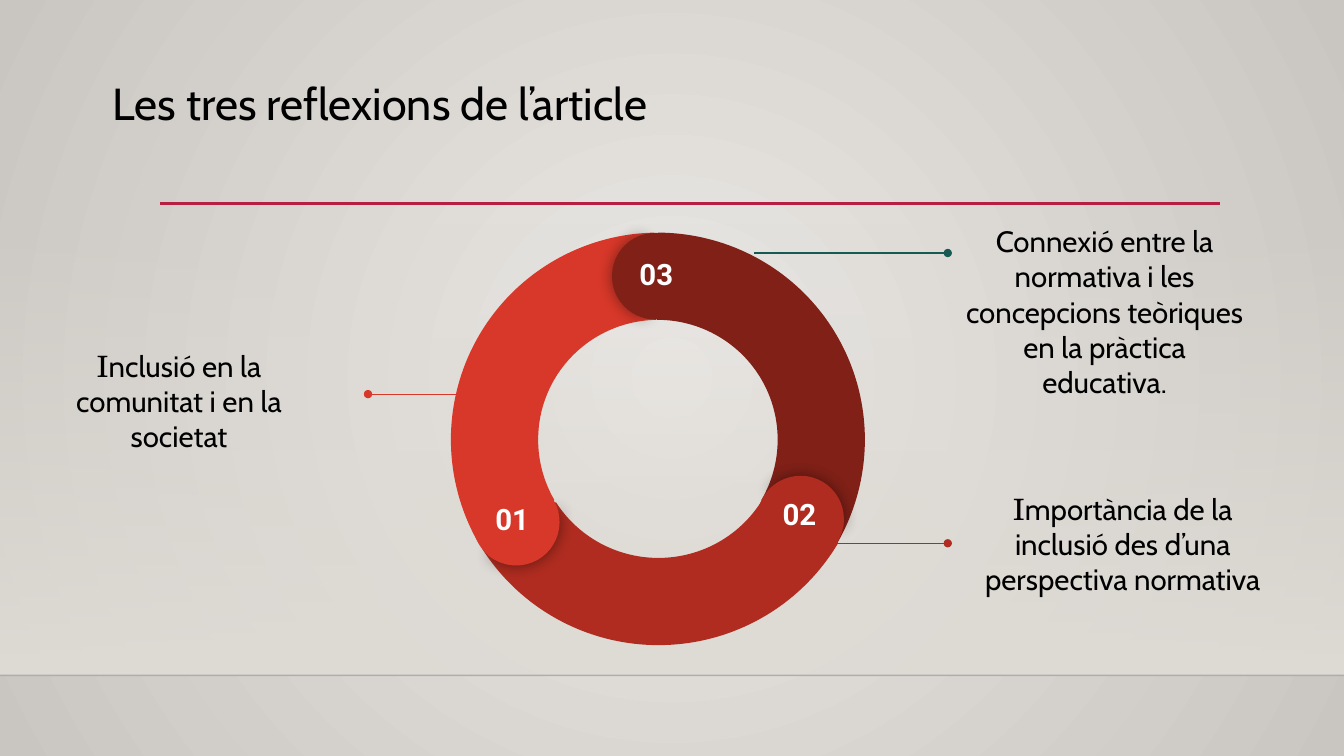
from lxml import etree
from pptx import Presentation
from pptx.dml.color import RGBColor
from pptx.enum.shapes import MSO_CONNECTOR, MSO_SHAPE
from pptx.enum.text import MSO_ANCHOR, PP_ALIGN
from pptx.oxml import parse_xml
from pptx.oxml.ns import nsdecls, qn
from pptx.util import Inches, Pt

RECT, ARC, PIE = MSO_SHAPE.RECTANGLE, MSO_SHAPE.BLOCK_ARC, MSO_SHAPE.PIE
STRAIGHT = MSO_CONNECTOR.STRAIGHT
LEFT, CENTER = PP_ALIGN.LEFT, PP_ALIGN.CENTER
TOP, MIDDLE = MSO_ANCHOR.TOP, MSO_ANCHOR.MIDDLE

# Content
W, H = 13.33, 7.5
FLOOR = 6.7
BLACK, WHITE = "000000", "FFFFFF"
BRIGHT, MEDIUM, DARK = "D83829", "B02C20", "802017"
BODY, SERIF, NUMERAL = "Cabin", "TeX Gyre Schola", "Roboto"
TITLE = "Les tres reflexions de l’article"

# Ring segments, back to front: box, rotation, colour, arc adjustments
ARCS = [
    ((4.45, 2.3, 4.12, 4.14), 60, DARK, (126.23, 197.82, 0.21)),
    ((4.46, 2.28, 4.14, 4.12), 180, MEDIUM, (126.23, 196.63, 0.21)),
    ((4.48, 2.3, 4.12, 4.14), 300, BRIGHT, (126.23, 197.03, 0.21)),
]
# Round segment ends: number, left, top, rotation, colour, number offset
DISC = 0.86
DISCS = [
    ("01", 4.69, 4.75, 240, BRIGHT, (0.01, 0.09)),
    ("03", 6.07, 2.31, 0, DARK, (0.06, 0.1)),
    ("02", 7.51, 4.72, 120, MEDIUM, (0.04, 0.07)),
]
SHADED_HALF, PLAIN_HALF = (61.9, 149.96), (40.28, 171.84)
# Labels: box, runs
LABELS = [
    ((0.19, 3.02, 3.17, 1.91),
     [("I", SERIF), ("nclusió en la comunitat i en la societat", BODY)]),
    ((9.37, 1.91, 3.17, 2.36),
     [("Connexió entre la normativa i les concepcions teòriques "
       "en la pràctica educativa.", BODY)]),
    ((9.55, 4.44, 3.17, 1.91),
     [("I", SERIF),
      ("mportància de la inclusió des d’una perspectiva normativa", BODY)]),
]
# Leader lines: start x, end x, y, colour
LEADERS = [
    (4.59, 3.65, 3.91, BRIGHT),
    (7.48, 9.4, 2.51, "155B54"),
    (7.48, 9.4, 5.39, MEDIUM),
]


def rgb(hex_colour):
    return RGBColor.from_string(hex_colour)


def inches(values):
    return [Inches(v) for v in values]


def set_gradient(props, stops, direction):
    """Replace a solid fill by a gradient of (position, colour, opacity)."""
    gs = "".join(
        f'<a:gs pos="{pos * 1000}"><a:srgbClr val="{colour}">'
        f'<a:alpha val="{alpha * 1000}"/></a:srgbClr></a:gs>'
        for pos, colour, alpha in stops)
    props.replace(props.find(qn("a:solidFill")), parse_xml(
        f'<a:gradFill {nsdecls("a")} rotWithShape="1"><a:gsLst>{gs}</a:gsLst>'
        f'{direction}</a:gradFill>'))


def add_shape(kind, box, colour, rotation=0, adjustments=()):
    sp = s.shapes.add_shape(kind, *inches(box))
    sp.shadow.inherit = False
    sp.fill.solid()
    sp.fill.fore_color.rgb = rgb(colour)
    sp.line.fill.background()
    sp.rotation = rotation
    for i, value in enumerate(adjustments):
        sp.adjustments[i] = value
    return sp


def add_line(x1, y1, x2, y2, colour, width):
    line = s.shapes.add_connector(STRAIGHT, *inches((x1, y1, x2, y2)))
    line.line.color.rgb = rgb(colour)
    line.line.width = Pt(width)
    etree.SubElement(line._element.spPr, qn("a:effectLst"))
    return line


def add_text(box, runs, size, colour=BLACK, align=CENTER, anchor=MIDDLE,
             inset=(0.13, 0.13), bold=False):
    tf = s.shapes.add_textbox(*inches(box)).text_frame
    tf.word_wrap = True
    tf.vertical_anchor = anchor
    tf.margin_left = tf.margin_right = Inches(inset[0])
    tf.margin_top = tf.margin_bottom = Inches(inset[1])
    p = tf.paragraphs[0]
    p.alignment = align
    for text, font in runs:
        r = p.add_run()
        r.text = text
        r.font.name, r.font.size, r.font.bold = font, Pt(size), bold
        r.font.color.rgb = rgb(colour)
    return p


prs = Presentation()
prs.slide_width, prs.slide_height = Inches(W), Inches(H)
s = prs.slides.add_slide(prs.slide_layouts[6])

# Background, wall and floor
s.background.fill.solid()
set_gradient(
    s.element.find(".//" + qn("p:bgPr")),
    [(0, "EBE9E6", 100), (100, "C9C5C0", 100)],
    '<a:path path="circle"><a:fillToRect l="50000" t="50000" r="50000" '
    'b="50000"/></a:path>')
wall = add_shape(RECT, (0, 2.21, W, FLOOR - 2.21), "DFDBD5")
set_gradient(wall._element.spPr, [(0, "DFDBD5", 0), (100, "DFDBD5", 100)],
             '<a:lin ang="5400000" scaled="0"/>')
edge = add_line(0, FLOOR, W, FLOOR, "000001", 1)
edge_colour = edge._element.spPr.find(".//" + qn("a:srgbClr"))
etree.SubElement(edge_colour, qn("a:alpha"), val="20000")

# Title and rule
add_line(1.59, 2.02, 12.1, 2.02, "B71E42", 2.5)
p = add_text((1.02, 0.76, 10.5, 1.15), [(TITLE, BODY)], 32,
             align=LEFT, anchor=TOP, inset=(0.1, 0.05))
p.line_spacing = 0.9

# Leader lines with a dot at the label end
for x1, x2, y, colour in LEADERS:
    leader = add_line(x1, y, x2, y, colour, 0.75)
    etree.SubElement(leader.line._get_or_add_ln(), qn("a:tailEnd"), type="oval")

# Ring
for box, rotation, colour, adjustments in ARCS:
    add_shape(ARC, box, colour, rotation, adjustments)

# Segment ends: a shaded half under a plain half
for number, x, y, rotation, colour, offset in DISCS:
    box = (x, y, DISC, DISC)
    half = add_shape(PIE, box, colour, rotation + 0.65, SHADED_HALF)
    half._element.spPr.find(qn("a:effectLst")).append(parse_xml(
        f'<a:outerShdw {nsdecls("a")} blurRad="{Pt(11.2)}" dist="0" dir="0" '
        'algn="ctr" rotWithShape="0"><a:srgbClr val="000000">'
        '<a:alpha val="43000"/></a:srgbClr></a:outerShdw>'))
    add_shape(PIE, box, colour, (rotation + 180) % 360, PLAIN_HALF)
for number, x, y, rotation, colour, (dx, dy) in DISCS:
    add_text((x + dx, y + dy, 0.76, 0.4), [(number, NUMERAL)], 21, WHITE,
             anchor=TOP, bold=True)

# Labels
for box, runs in LABELS:
    add_text(box, runs, 21)

prs.save("out.pptx")
